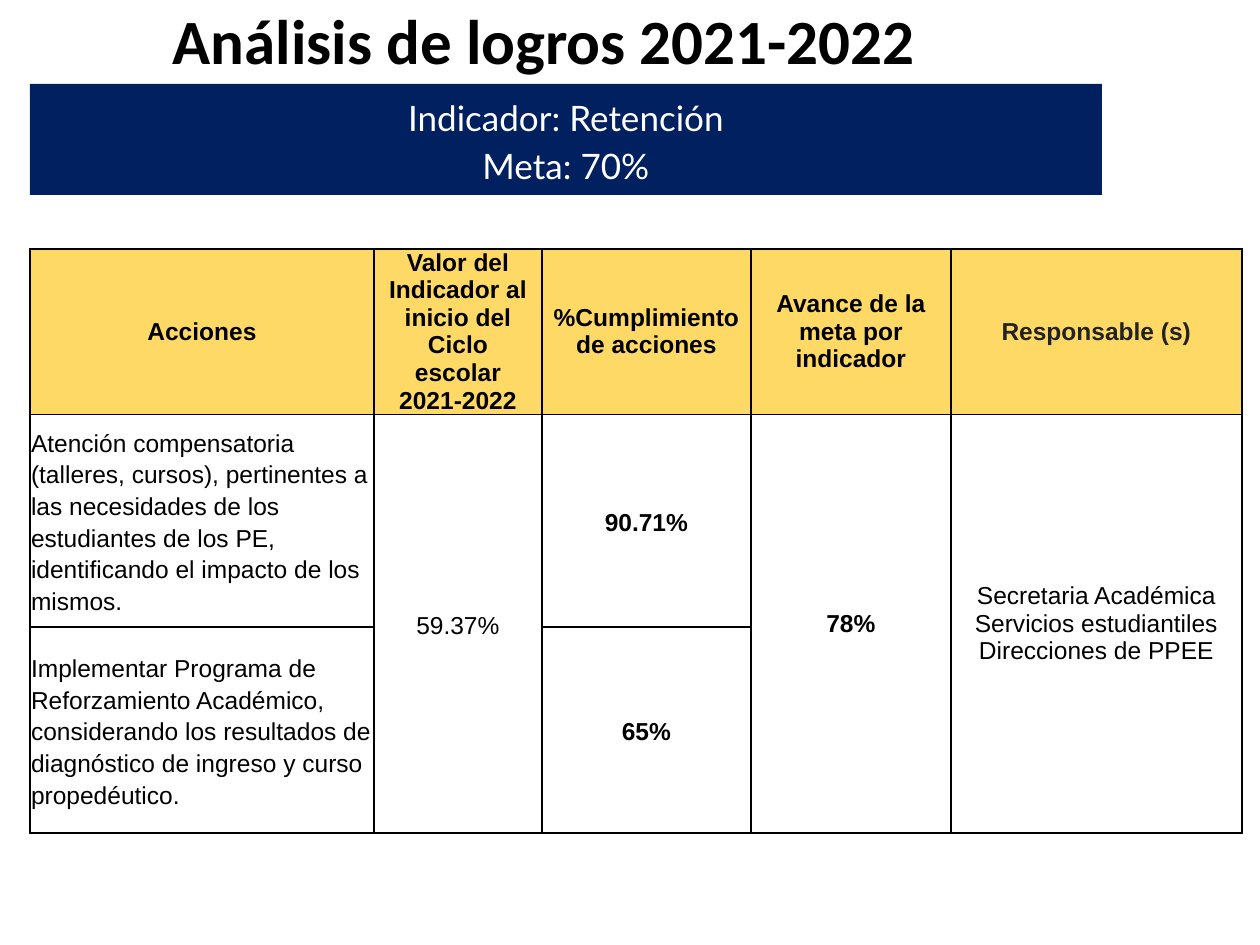
"""Build the achievement analysis slide for the retention indicator."""
from dataclasses import dataclass

from lxml import etree
from pptx import Presentation, util as u
from pptx.dml.color import RGBColor
from pptx.enum import shapes, text
from pptx.oxml.ns import qn

EMU_PER_PX = u.Inches(1) / 126


@dataclass(frozen=True)
class Theme:
    black: str = "000000"
    white: str = "FFFFFF"
    navy: str = "002060"
    gold: str = "FFD965"
    charcoal: str = "222222"
    title_font: str = "Calibri"
    band_font: str = "Lato"
    table_font: str = "Arial"
    title_size: int = 36
    band_size: int = 20
    table_size: int = 14
    border: float = 1


THEME = Theme()


@dataclass(frozen=True)
class Box:
    left: int
    top: int
    width: int
    height: int

    def emu(self) -> list[int]:
        return [px(n) for n in (self.left, self.top, self.width, self.height)]


@dataclass(frozen=True)
class Entry:
    row: int
    col: int
    words: str
    bold: bool = False
    align: text.PP_ALIGN = text.PP_ALIGN.CENTER
    spacing: float = 1.15
    margin: int = 1
    color: str = THEME.black
    row_span: int = 1


COLUMNS = [344, 168, 209, 200, 291]
ROWS = [165, 213, 206]
TITLE_BOX = Box(100, 11, 888, 67)
BAND_BOX = Box(30, 84, 1072, 111)
TABLE_BOX = Box(30, 249, sum(COLUMNS), sum(ROWS))
WIDE_MARGIN = 9

HEADERS = [
    "Acciones",
    "Valor del Indicador al inicio del Ciclo escolar 2021-2022",
    "%Cumplimiento de acciones",
    "Avance de la meta por indicador",
    "Responsable (s)",
]
ACTIONS = [
    ("Atención compensatoria (talleres, cursos), pertinentes a las necesidades de los "
     "estudiantes de los PE, identificando el impacto de los mismos.", "90.71%"),
    ("Implementar Programa de Reforzamiento Académico, considerando los resultados de "
     "diagnóstico de ingreso y curso propedéutico.", "65%"),
]
RESPONSIBLE = "Secretaria Académica Servicios estudiantiles Direcciones de PPEE"


def px(n: int) -> int:
    return round(n * EMU_PER_PX)


def rgb(value: str) -> RGBColor:
    return RGBColor.from_string(value)


def style(p, font: str, size: int, color: str, bold: bool, align, spacing: float) -> None:
    p.alignment, p.line_spacing = align, spacing
    p.font.name, p.font.size, p.font.bold = font, u.Pt(size), bold
    p.font.color.rgb = rgb(color)


def fill(sp, color: str) -> None:
    sp.fill.solid()
    sp.fill.fore_color.rgb = rgb(color)


def add_title(s) -> None:
    sp = s.shapes.title
    sp.left, sp.top, sp.width, sp.height = TITLE_BOX.emu()
    fill(sp, THEME.white)
    tf = sp.text_frame
    tf.text = "Análisis de logros 2021-2022"
    tf.auto_size = text.MSO_AUTO_SIZE.NONE
    tf.vertical_anchor = text.MSO_ANCHOR.MIDDLE
    style(tf.paragraphs[0], THEME.title_font, THEME.title_size, THEME.black, True,
          text.PP_ALIGN.CENTER, 0.9)


def add_band(s) -> None:
    sp = s.shapes.add_shape(shapes.MSO_SHAPE.RECTANGLE, *BAND_BOX.emu())
    sp.shadow.inherit = False
    sp.line.fill.background()
    fill(sp, THEME.navy)
    tf = sp.text_frame
    tf.word_wrap = True
    tf.auto_size = text.MSO_AUTO_SIZE.SHAPE_TO_FIT_TEXT
    tf.vertical_anchor = text.MSO_ANCHOR.TOP
    tf.text = "Indicador: Retención\nMeta: 70%"
    for p in tf.paragraphs:
        style(p, THEME.band_font, THEME.band_size, THEME.white, False,
              text.PP_ALIGN.CENTER, 1.15)


def add_borders(cell) -> None:
    tc_pr = cell._tc.get_or_add_tcPr()
    for side in ("a:lnL", "a:lnR", "a:lnT", "a:lnB"):
        ln = etree.SubElement(tc_pr, qn(side), w=str(u.Pt(THEME.border)))
        solid = etree.SubElement(ln, qn("a:solidFill"))
        etree.SubElement(solid, qn("a:srgbClr"), val=THEME.black)


def table_entries() -> list[Entry]:
    entries = [
        Entry(0, col, words, bold=True, spacing=1, margin=WIDE_MARGIN,
              color=THEME.charcoal if col == 4 else THEME.black)
        for col, words in enumerate(HEADERS)
    ]
    for row, (action, progress) in enumerate(ACTIONS, start=1):
        entries += [Entry(row, 0, action, align=text.PP_ALIGN.LEFT),
                    Entry(row, 2, progress, bold=True)]
    return entries + [
        Entry(1, 1, "59.37%", row_span=2),
        Entry(1, 3, "78%", bold=True, spacing=1, margin=WIDE_MARGIN, row_span=2),
        Entry(1, 4, RESPONSIBLE, spacing=1, margin=WIDE_MARGIN, row_span=2),
    ]


def write_entry(table, entry: Entry) -> None:
    cell = table.cell(entry.row, entry.col)
    if entry.row_span > 1:
        cell.merge(table.cell(entry.row + entry.row_span - 1, entry.col))
    cell.text = entry.words
    cell.vertical_anchor = text.MSO_ANCHOR.MIDDLE
    cell.margin_left = cell.margin_right = px(entry.margin)
    style(cell.text_frame.paragraphs[0], THEME.table_font, THEME.table_size, entry.color,
          entry.bold, entry.align, entry.spacing)


def add_achievements(s) -> None:
    table = s.shapes.add_table(len(ROWS), len(COLUMNS), *TABLE_BOX.emu()).table
    table.first_row = table.horz_banding = False
    for column, width in zip(table.columns, COLUMNS):
        column.width = px(width)
    for index, (row, height) in enumerate(zip(table.rows, ROWS)):
        row.height = px(height)
        for cell in row.cells:
            add_borders(cell)
            fill(cell, THEME.white if index else THEME.gold)
            cell.margin_top = cell.margin_bottom = 0
    for entry in table_entries():
        write_entry(table, entry)


def main() -> None:
    prs = Presentation()
    prs.slide_width, prs.slide_height = px(1260), px(945)
    s = prs.slides.add_slide(prs.slide_layouts[5])
    add_title(s)
    add_achievements(s)
    add_band(s)
    prs.save("out.pptx")


if __name__ == "__main__":
    main()
